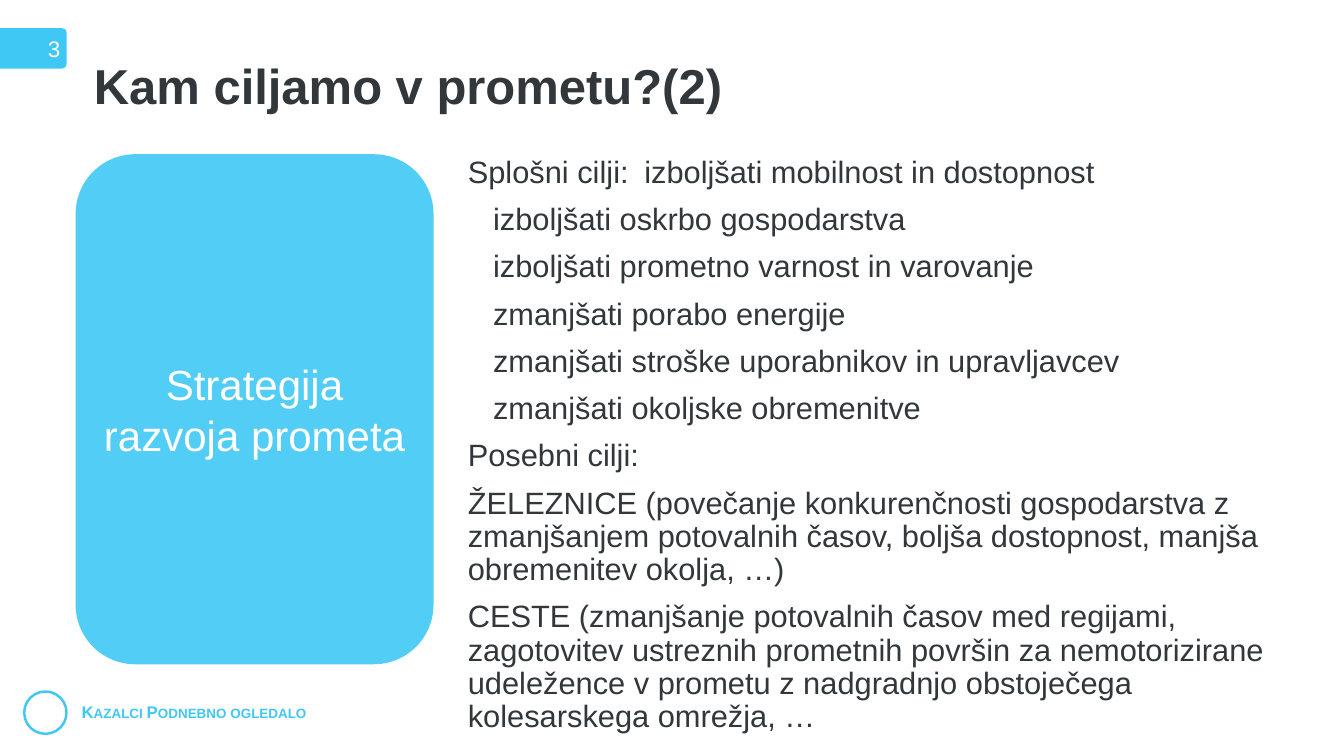
from lxml import etree
from pptx import Presentation
from pptx import util as u
from pptx.dml.color import RGBColor
from pptx.enum import shapes, text
from pptx.oxml import ns

PX = 18288  # EMU per px, 50 px to the inch
WIDTH, HEIGHT = 1333, 750
FONT = "Arial"
BLUE, DARK, WHITE = "40C8F4", "31373B", "FFFFFF"
GOAL_TAB = 200

GENERAL_GOALS = [
    "izboljšati mobilnost in dostopnost",
    "izboljšati oskrbo gospodarstva",
    "izboljšati prometno varnost in varovanje",
    "zmanjšati porabo energije",
    "zmanjšati stroške uporabnikov in upravljavcev",
    "zmanjšati okoljske obremenitve",
]
SPECIAL_GOALS = [
    "Posebni cilji:",
    "ŽELEZNICE (povečanje konkurenčnosti gospodarstva z zmanjšanjem potovalnih "
    "časov, boljša dostopnost, manjša obremenitev okolja, …)",
    "CESTE (zmanjšanje potovalnih časov med regijami, zagotovitev ustreznih "
    "prometnih površin za nemotorizirane udeležence v prometu z nadgradnjo "
    "obstoječega kolesarskega omrežja, …",
]


def px(value):
    return u.Emu(value * PX)


def color(hex_code):
    return RGBColor.from_string(hex_code)


def set_all(target, values):
    for name, value in values.items():
        setattr(target, name, value)


def place(shape, left, top, width, height):
    set_all(shape, {"left": px(left), "top": px(top),
                    "width": px(width), "height": px(height)})


def add_line(para, words, size, hex_code, bold=False, **para_format):
    """Write one run into a paragraph and format both."""
    set_all(para, para_format)
    span = para.add_run()
    span.text = words
    set_all(span.font, {"name": FONT, "size": u.Pt(size), "bold": bold})
    span.font.color.rgb = color(hex_code)
    return span


def prepare_frame(shape, anchor):
    frame = shape.text_frame
    set_all(frame, {"word_wrap": True, "vertical_anchor": anchor,
                    "auto_size": text.MSO_AUTO_SIZE.NONE})
    return frame


def set_list_format(para):
    """Remove the bullet and its indent, and set the tab for the goals."""
    props = para._p.get_or_add_pPr()
    props.set("marL", "0")
    props.set("indent", "0")
    etree.SubElement(props, ns.qn("a:buNone"))
    tabs = etree.SubElement(props, ns.qn("a:tabLst"))
    etree.SubElement(tabs, ns.qn("a:tab"), pos=str(px(GOAL_TAB)), algn="l")


def add_title(page, words):
    title = page.shapes.title
    place(title, 88, 59, 1149, 145)
    frame = prepare_frame(title, text.MSO_ANCHOR.TOP)
    add_line(frame.paragraphs[0], words, 70, DARK, bold=True,
             alignment=text.PP_ALIGN.LEFT, line_spacing=0.9)


def add_goals(page, lines):
    body = page.placeholders[1]
    place(body, 459, 153, 845, 460)
    frame = prepare_frame(body, text.MSO_ANCHOR.TOP)
    for number, words in enumerate(lines):
        para = frame.add_paragraph() if number else frame.paragraphs[0]
        set_list_format(para)
        add_line(para, words, 44, DARK, line_spacing=0.9,
                 space_before=u.Pt(20 if number else 0))


def add_panel(page, bounds, words, size, alignment, corner=None, opacity=None):
    """Add a blue rounded rectangle with white text."""
    panel = page.shapes.add_shape(shapes.MSO_SHAPE.ROUNDED_RECTANGLE,
                                  *map(px, bounds))
    panel.shadow.inherit = False
    panel.fill.solid()
    panel.fill.fore_color.rgb = color(BLUE)
    panel.line.fill.background()
    if corner is not None:
        panel.adjustments[0] = corner
    if opacity is not None:
        fill_color = panel._element.spPr.find(".//" + ns.qn("a:srgbClr"))
        etree.SubElement(fill_color, ns.qn("a:alpha"), val=str(opacity * 1000))
    frame = prepare_frame(panel, text.MSO_ANCHOR.MIDDLE)
    add_line(frame.paragraphs[0], words, size, WHITE, alignment=alignment)


def add_ring(page, bounds):
    ring = page.shapes.add_shape(shapes.MSO_SHAPE.OVAL, *map(px, bounds))
    ring.shadow.inherit = False
    ring.fill.background()
    ring.line.color.rgb = color(BLUE)
    ring.line.width = u.Pt(3.5)


def add_footer(page, bounds, words):
    box = page.shapes.add_textbox(*map(px, bounds))
    frame = prepare_frame(box, text.MSO_ANCHOR.TOP)
    span = add_line(frame.paragraphs[0], words, 24, BLUE, bold=True)
    span.font._element.set("cap", "small")


def main():
    deck = Presentation()
    set_all(deck, {"slide_width": px(WIDTH), "slide_height": px(HEIGHT)})
    page = deck.slides.add_slide(deck.slide_layouts[1])

    # Footer
    add_footer(page, (76, 694, 287, 25), "Kazalci Podnebno ogledalo")
    add_ring(page, (24, 686, 42, 42))

    # Title and list of goals
    add_title(page, "Kam ciljamo v prometu?(2)")
    first, *others = GENERAL_GOALS
    add_goals(page, ["Splošni cilji:\t" + first,
                     *("\t" + goal for goal in others), *SPECIAL_GOALS])

    # Page number tab and strategy panel
    add_panel(page, (-26, 28, 92, 40), "3", 32, text.PP_ALIGN.RIGHT, corner=0.11)
    add_panel(page, (75, 153, 355, 506), "Strategija razvoja prometa", 60,
              text.PP_ALIGN.CENTER, opacity=90)

    deck.save("out.pptx")


if __name__ == "__main__":
    main()
